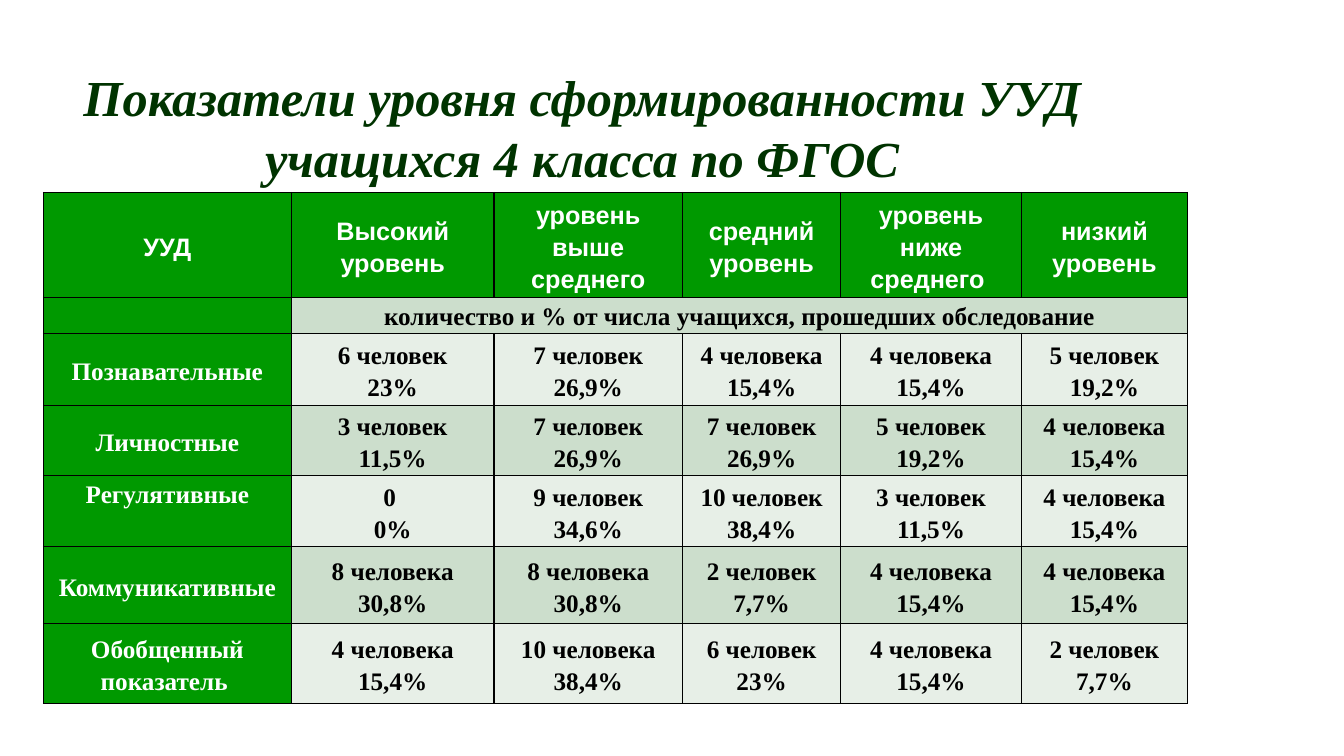
from lxml import etree
from pptx import Presentation
from pptx.dml.color import RGBColor
from pptx.enum.text import MSO_ANCHOR, PP_ALIGN
from pptx.oxml.ns import qn
from pptx.util import Inches, Pt

TITLE = "Показатели уровня сформированности УУД учащихся 4 класса по ФГОС"
HEADS = ["УУД", "Высокий уровень", "уровень выше среднего", "средний уровень",
         "уровень ниже среднего ", "низкий уровень"]
NOTE = "количество и % от числа учащихся, прошедших обследование"
SKILLS = [
    ["Познавательные", "6 человек\n23%", "7 человек\n26,9%", "4 человека\n15,4%",
     "4 человека\n15,4%", "5 человек\n19,2%"],
    ["Личностные", "3 человек\n11,5%", "7 человек\n26,9%", "7 человек\n26,9%",
     "5 человек\n19,2%", "4 человека\n15,4%"],
    ["Регулятивные", "0 \n0%", "9 человек\n34,6%", "10 человек\n38,4%",
     "3 человек\n11,5%", "4 человека\n15,4%"],
    ["Коммуникативные", "8 человека\n30,8%", "8 человека\n30,8%", "2 человек\n7,7%",
     "4 человека\n15,4%", "4 человека\n15,4%"],
    ["Обобщенный показатель ", "4 человека\n15,4%", "10 человека\n38,4%",
     "6 человек\n23%", "4 человека\n15,4%", "2 человек\n7,7%"],
]
ROWS = [HEADS, ["", NOTE, "", "", "", ""]] + SKILLS
WIDTHS = [2.46, 2.01, 1.87, 1.57, 1.79, 1.65]
HEIGHTS = [1.03, 0.35, 0.71, 0.7, 0.68, 0.77, 0.79]
NOTE_ROW, TOP_ROW = 1, 4

SANS, SERIF = "Arial", "Times New Roman"
DARK = RGBColor(0x00, 0x33, 0x00)
GREEN = RGBColor(0x00, 0x99, 0x00)
BANDS = [RGBColor(0xE7, 0xEF, 0xE7), RGBColor(0xCC, 0xDE, 0xCC)]
WHITE = RGBColor(0xFF, 0xFF, 0xFF)
BLACK = RGBColor(0x00, 0x00, 0x00)
CENTER = PP_ALIGN.CENTER
TOP, MIDDLE, BOTTOM = MSO_ANCHOR.TOP, MSO_ANCHOR.MIDDLE, MSO_ANCHOR.BOTTOM
INSETS = {"margin_left": Inches(0.06), "margin_right": Inches(0.06),
          "margin_top": Inches(0.01), "margin_bottom": 0}


def style(item, values):
    for name, value in values.items():
        setattr(item, name, value)


def write(frame, text, color, spacing, font):
    """Put each line of text in its own centred paragraph."""
    frame.text = text
    for para in frame.paragraphs:
        style(para, {"alignment": CENTER, "line_spacing": spacing})
        for run in para.runs:
            style(run.font, font)
            run.font.color.rgb = color


def border(cell):
    props = cell._tc.get_or_add_tcPr()
    for spot, side in enumerate(("lnL", "lnR", "lnT", "lnB")):
        line = etree.Element(qn("a:" + side), w=str(Pt(1)))
        fill = etree.SubElement(line, qn("a:solidFill"))
        etree.SubElement(fill, qn("a:srgbClr"), val=str(BLACK))
        props.insert(spot, line)


def add_title(slide):
    box = slide.shapes.add_textbox(Inches(0.33), Inches(0.6), Inches(10.89), Inches(1.31))
    frame = box.text_frame
    style(frame, {"word_wrap": True, "vertical_anchor": BOTTOM})
    write(frame, TITLE, DARK, 1.0,
          {"name": SERIF, "size": Pt(36), "bold": True, "italic": True})


def add_grid(slide):
    frame = slide.shapes.add_table(len(ROWS), len(WIDTHS), Inches(0.43), Inches(1.91),
                                   Inches(sum(WIDTHS)), Inches(sum(HEIGHTS)))
    table = frame.table
    for col, width in zip(table.columns, WIDTHS):
        col.width = Inches(width)
    for r, (row, height) in enumerate(zip(ROWS, HEIGHTS)):
        table.rows[r].height = Inches(height)
        for c, text in enumerate(row):
            cell = table.cell(r, c)
            green = r == 0 or c == 0
            high = r == NOTE_ROW or (r == TOP_ROW and c == 0)
            style(cell, INSETS)
            cell.vertical_anchor = TOP if high else MIDDLE
            cell.fill.solid()
            cell.fill.fore_color.rgb = GREEN if green else BANDS[r % 2]
            write(cell.text_frame, text, WHITE if green else BLACK, 1.15,
                  {"name": SERIF if r else SANS, "size": Pt(18), "bold": True})
            border(cell)
    table.cell(NOTE_ROW, 1).merge(table.cell(NOTE_ROW, len(WIDTHS) - 1))


def main():
    deck = Presentation()
    style(deck, {"slide_width": Inches(13.33), "slide_height": Inches(7.5)})
    slide = deck.slides.add_slide(deck.slide_layouts[6])
    add_title(slide)
    add_grid(slide)
    deck.save("out.pptx")


if __name__ == "__main__":
    main()
